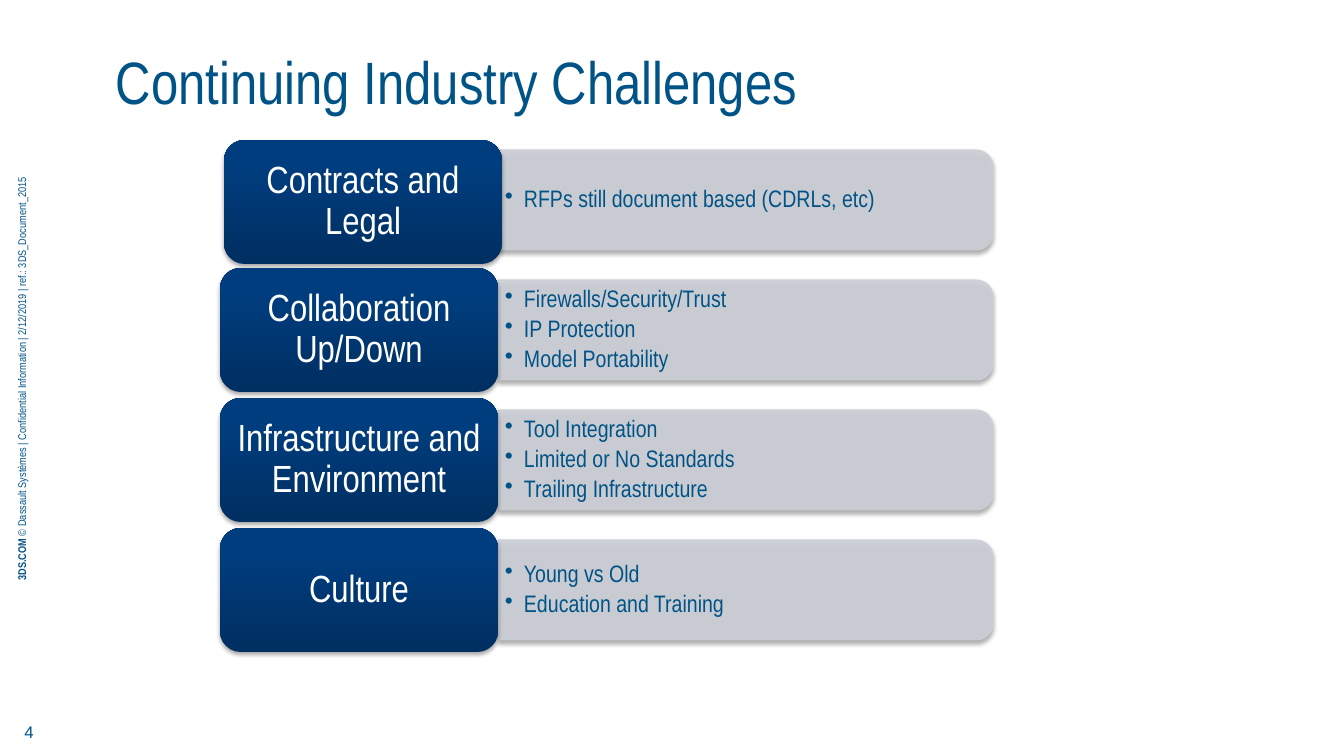
"""Builds the slide on continuing industry challenges."""
from dataclasses import dataclass

from lxml.etree import SubElement
from pptx import Presentation
from pptx.dml.color import RGBColor
from pptx.enum.shapes import MSO_SHAPE
from pptx.enum.text import MSO_ANCHOR, PP_ALIGN
from pptx.oxml import parse_xml
from pptx.oxml.ns import nsdecls, qn
from pptx.util import Pt

TITLE = "Continuing Industry Challenges"
PAGE = "4"
FOOTER = [
    ("3DS.COM ", True),
    ("© Dassault Systèmes | Confidential Information | 2/12/2019 | ref.: 3DS_Document_2015", False),
]
CHALLENGES = [
    ("Contracts and Legal", ["RFPs still document based (CDRLs, etc)"]),
    ("Collaboration Up/Down", ["Firewalls/Security/Trust", "IP Protection", "Model Portability"]),
    ("Infrastructure and Environment",
     ["Tool Integration", "Limited or No Standards", "Trailing Infrastructure"]),
    ("Culture", ["Young vs Old", "Education and Training"]),
]


@dataclass(frozen=True)
class Theme:
    """Colours, fonts and type sizes."""
    ink: str = "005386"
    white: str = "FFFFFF"
    panel: str = "CCCFD6"
    card_stops: tuple = ((0, "002F61"), (80, "003D7E"), (100, "003D7F"))
    narrow: str = "Arial Narrow"
    plain: str = "Arial"
    title: float = 42.7
    card: float = 27
    bullet: float = 17
    page: float = 12
    footer: float = 8


THEME = Theme()
SCALE = 914400 / 100.8
SLIDE = (1344, 756)
FIRST_CENTER, PITCH = 200, 130
CARD_LEFT, CARD_WIDTH, CARD_HEIGHT = 220, 278, 124
FIRST_CARD_SHIFT = (4, 2)
PANEL_LEFT, PANEL_WIDTH, PANEL_HEIGHT = 498, 495, 100
BULLET_HEIGHT, BULLET_INDENT = 90, 19


def px(*lengths):
    return [round(length * SCALE) for length in lengths]


def set_frame(frame, across, down, anchor=MSO_ANCHOR.MIDDLE):
    frame.word_wrap = True
    frame.vertical_anchor = anchor
    frame.margin_left = frame.margin_right = px(across)[0]
    frame.margin_top = frame.margin_bottom = px(down)[0]
    return frame


def set_font(paragraph, size, color=THEME.ink, name=THEME.narrow):
    paragraph.font.size = Pt(size)
    paragraph.font.name = name
    paragraph.font.color.rgb = RGBColor.from_string(color)


def add_text_frame(slide, box, across, down, anchor=MSO_ANCHOR.MIDDLE):
    return set_frame(slide.shapes.add_textbox(*px(*box)).text_frame, across, down, anchor)


def add_shadow(shape):
    shape.shadow.inherit = False
    effects = shape._element.spPr.find(qn("a:effectLst"))
    outer = SubElement(effects, qn("a:outerShdw"), blurRad="40000", dist="23000",
                       dir="5400000", rotWithShape="0")
    black = SubElement(outer, qn("a:srgbClr"), val="000000")
    SubElement(black, qn("a:alpha"), val="35000")


def add_panel(slide, center):
    left = PANEL_LEFT + (PANEL_WIDTH - PANEL_HEIGHT) / 2
    panel = slide.shapes.add_shape(
        MSO_SHAPE.ROUND_2_SAME_RECTANGLE,
        *px(left, center - PANEL_WIDTH / 2, PANEL_HEIGHT, PANEL_WIDTH))
    panel.rotation = 90
    panel.fill.solid()
    panel.fill.fore_color.rgb = RGBColor.from_string(THEME.panel)
    panel.line.color.rgb = RGBColor.from_string(THEME.panel)
    panel.line.width = Pt(0.75)
    for color in panel._element.spPr.iter(qn("a:srgbClr")):
        SubElement(color, qn("a:alpha"), val="90000")
    add_shadow(panel)


def add_bullets(slide, center, points):
    box = (PANEL_LEFT, center - BULLET_HEIGHT / 2, PANEL_WIDTH - 5, BULLET_HEIGHT)
    frame = add_text_frame(slide, box, 7, 4)
    indent = px(BULLET_INDENT)[0]
    for index, point in enumerate(points):
        paragraph = frame.paragraphs[0] if index == 0 else frame.add_paragraph()
        paragraph.text = point
        paragraph.line_spacing = 0.9
        paragraph.space_after = Pt(3)
        properties = paragraph._p.get_or_add_pPr()
        properties.set("marL", str(indent))
        properties.set("indent", str(-indent))
        SubElement(properties, qn("a:buChar"), char="•")
        set_font(paragraph, THEME.bullet)


def add_card(slide, left, center, heading):
    card = slide.shapes.add_shape(
        MSO_SHAPE.ROUNDED_RECTANGLE,
        *px(left, center - CARD_HEIGHT / 2, CARD_WIDTH, CARD_HEIGHT))
    stops = "".join(f'<a:gs pos="{at * 1000}"><a:srgbClr val="{color}"/></a:gs>'
                    for at, color in THEME.card_stops)
    card._element.spPr.find(qn("a:prstGeom")).addnext(parse_xml(
        f'<a:gradFill {nsdecls("a")} rotWithShape="1"><a:gsLst>{stops}</a:gsLst>'
        '<a:lin ang="16200000" scaled="0"/></a:gradFill>'))
    card.line.fill.background()
    add_shadow(card)
    paragraph = set_frame(card.text_frame, 11, 6).paragraphs[0]
    paragraph.text = heading
    paragraph.alignment = PP_ALIGN.CENTER
    paragraph.line_spacing = 0.9
    set_font(paragraph, THEME.card, THEME.white)


def add_page_number(slide):
    paragraph = add_text_frame(slide, (0, 706, 58, 52), 13, 6).paragraphs[0]
    paragraph.text = PAGE
    paragraph.alignment = PP_ALIGN.CENTER
    set_font(paragraph, THEME.page, name=THEME.plain)


def add_footer(slide):
    footer = slide.shapes.add_textbox(*px(-357, 366, 758, 26))
    footer.rotation = 270
    paragraph = set_frame(footer.text_frame, 13, 6, MSO_ANCHOR.TOP).paragraphs[0]
    paragraph.alignment = PP_ALIGN.CENTER
    set_font(paragraph, THEME.footer)
    for words, bold in FOOTER:
        run = paragraph.add_run()
        run.text = words
        run.font.bold = bold


def add_title(slide):
    paragraph = add_text_frame(slide, (106, 53, 1164, 55), 10, 5).paragraphs[0]
    paragraph.text = TITLE
    set_font(paragraph, THEME.title)


def main():
    deck = Presentation()
    deck.slide_width, deck.slide_height = px(*SLIDE)
    slide = deck.slides.add_slide(deck.slide_layouts[6])
    add_page_number(slide)
    add_footer(slide)
    add_title(slide)
    for row, (heading, points) in enumerate(CHALLENGES):
        center = FIRST_CENTER + row * PITCH
        across, down = FIRST_CARD_SHIFT if row == 0 else (0, 0)
        add_panel(slide, center)
        add_bullets(slide, center, points)
        add_card(slide, CARD_LEFT + across, center + down, heading)
    deck.save("out.pptx")


if __name__ == "__main__":
    main()
